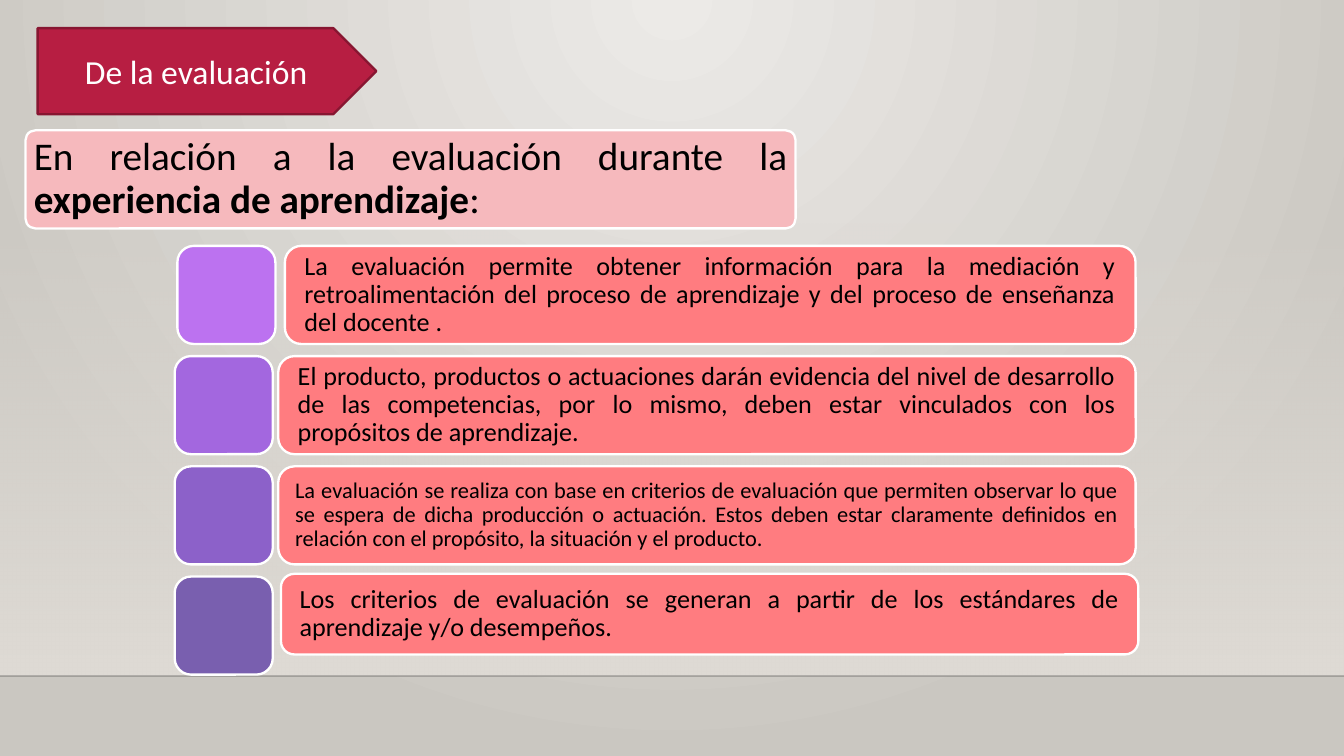
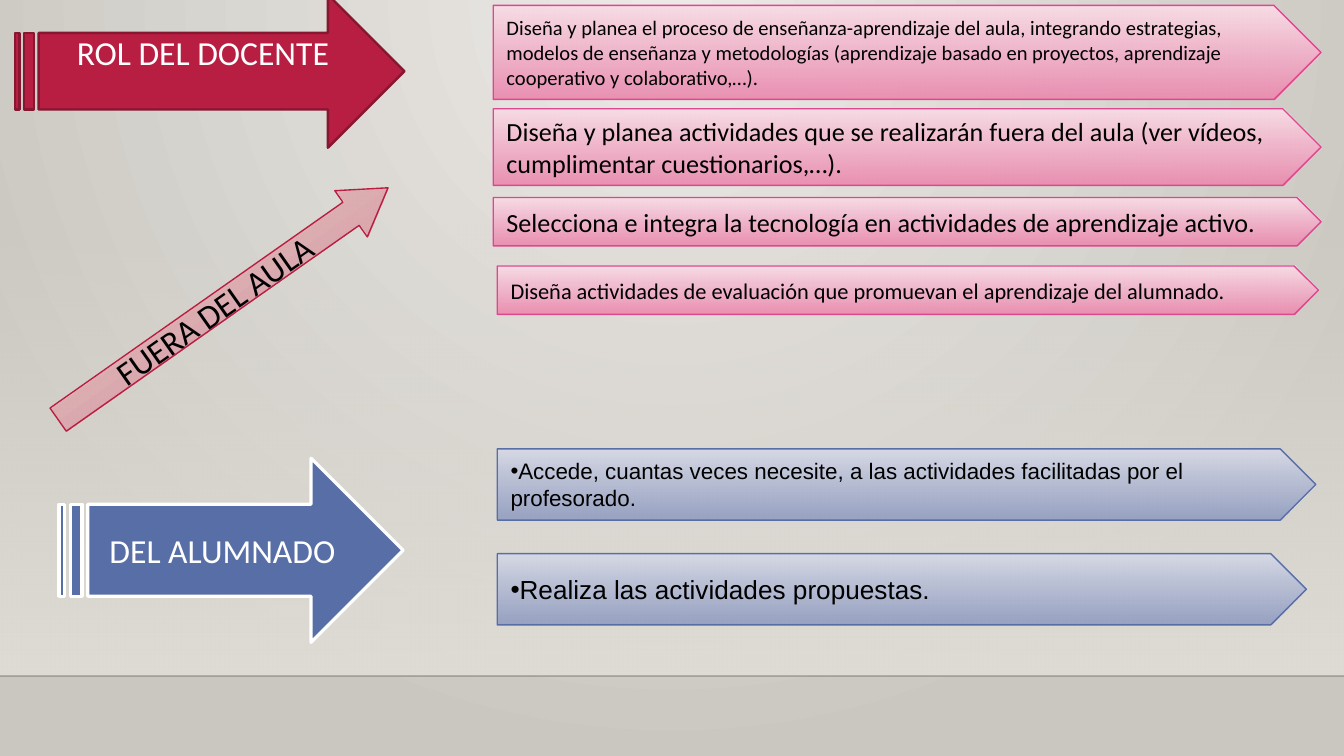
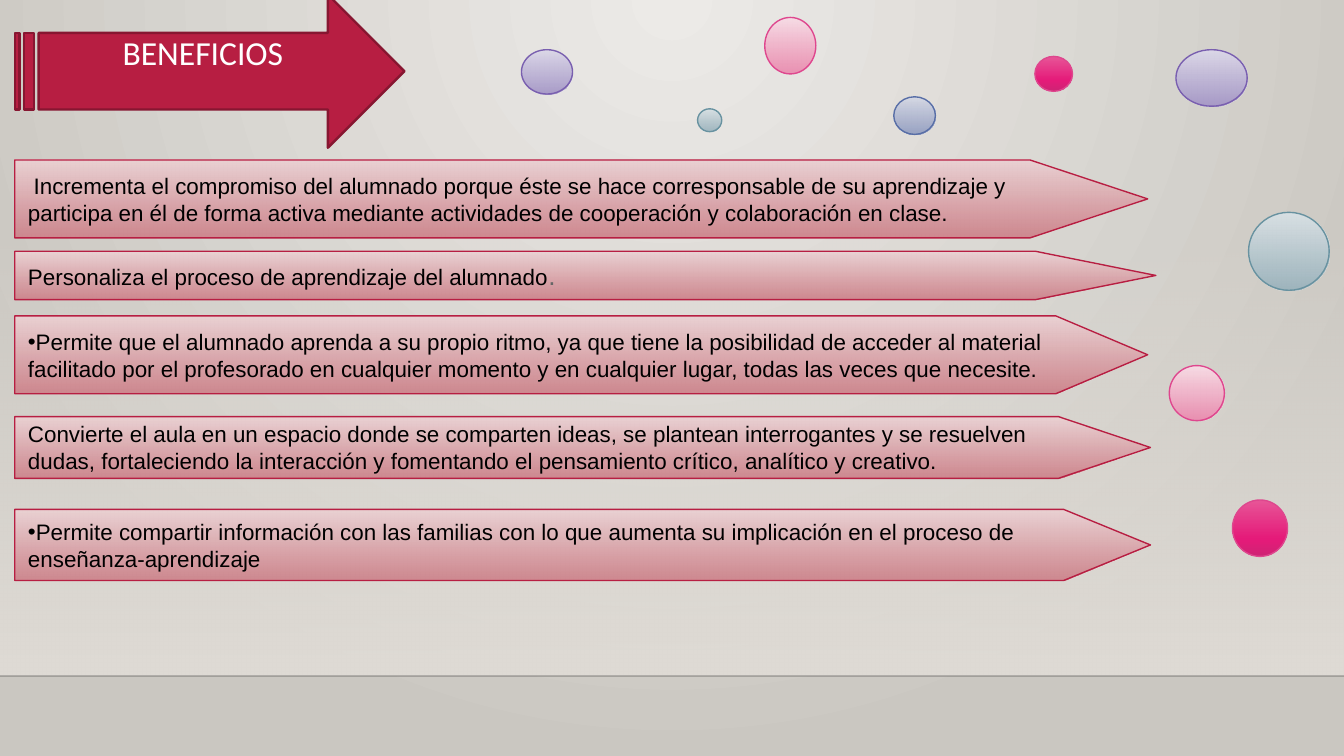
from dataclasses import dataclass
from typing import NamedTuple, Optional

from lxml.etree import SubElement
from pptx import Presentation
from pptx.dml.color import RGBColor
from pptx.enum.shapes import MSO_CONNECTOR, MSO_SHAPE
from pptx.enum.text import MSO_ANCHOR, MSO_AUTO_SIZE, PP_ALIGN
from pptx.oxml.ns import qn
from pptx.util import Inches, Pt

COLUMNS = 100
CELL = Inches(10) // COLUMNS
ROWS = 56.25
TITLE_ONLY = 5

BLACK, WHITE, GREY = "000000", "FFFFFF", "666666"
CRIMSON, DARK_CRIMSON = "B71E42", "871631"
ROSE, CORAL, BLUE = "F6B9BD", "FF7C80", "586EA6"


class Stop(NamedTuple):
    position: int
    color: str
    opacity: int = 100


class Tint(NamedTuple):
    stops: tuple[Stop, ...]
    outline: str


class Box(NamedTuple):
    column: float
    row: float
    columns: float
    rows: float


class Run(NamedTuple):
    text: str
    bold: bool = False
    size: Optional[float] = None
    color: Optional[str] = None


@dataclass(frozen=True)
class Step:
    """One numbered idea of the evaluation slide: a tile and its bar."""
    text: str
    tile_color: str
    tile_column: float = 13
    bar_column: float = 20.7
    bar_columns: float = 63.8
    bar_rows: float = 7.3
    bar_shift: float = 0
    size: float = 14
    inset: float = 1.1


@dataclass(frozen=True)
class Ribbon:
    """A pointed band with one statement."""
    box: Box
    text: str | list[Run]
    size: float = 12
    point: float = 0.5
    bullet: bool = False


class Bubble(NamedTuple):
    box: Box
    tint: Tint


def fade(start: str, end: str, outline: str) -> Tint:
    """Return a two-colour tint with a slightly transparent end."""
    return Tint((Stop(0, start), Stop(100, end, 92)), outline)


PINK_TINT = fade("F7DCE5", "EA8AAE", "DE478E")
RED_TINT = fade("EAD1D3", "CD828A", CRIMSON)
BLUE_TINT = fade("D6D9E5", "929DC0", BLUE)
PURPLE_TINT = fade("DCD8E8", "A395C6", "795FAF")
TEAL_TINT = fade("D9E1E4", "9AB2BC", "6892A0")
MAGENTA_TINT = Tint((Stop(0, "E75597"), Stop(69, "E51A79"), Stop(100, "CF2374")), "DE478E")
BACKDROP = (Stop(0, "ECEAE7"), Stop(100, "CAC7C1"))
FLOOR_FADE = (Stop(0, "DFDBD5", 0), Stop(100, "DFDBD5"))

STEPS = [
    Step("La evaluación permite obtener información para la mediación y retroalimentación "
         "del proceso de aprendizaje y del proceso de enseñanza del docente .",
         "BC72F0", tile_column=13.2, bar_column=21.2, bar_columns=63.3),
    Step("El producto, productos o actuaciones darán evidencia del nivel de desarrollo de las "
         "competencias, por lo mismo, deben estar vinculados con los propósitos de aprendizaje.",
         "A367DF"),
    Step("La evaluación se realiza con base en criterios de evaluación que permiten observar lo "
         "que se espera de dicha producción o actuación. Estos deben estar claramente definidos "
         "en relación con el propósito, la situación y el producto.",
         "8C61C9", size=12, inset=0.9),
    Step("Los criterios de evaluación se generan a partir de los estándares de aprendizaje y/o "
         "desempeños.", "795FAF", bar_column=20.9, bar_rows=6, bar_shift=-0.2),
]
TEACHER_TASKS = [
    Ribbon(Box(36.7, 0.4, 61.6, 7),
           "Diseña y planea el proceso de enseñanza-aprendizaje del aula, integrando estrategias, "
           "modelos de enseñanza y metodologías (aprendizaje basado en proyectos, aprendizaje "
           "cooperativo y colaborativo,…).", 11),
    Ribbon(Box(36.7, 8.1, 61.6, 5.7),
           "Diseña y planea actividades que se realizarán fuera del aula (ver vídeos, "
           "cumplimentar cuestionarios,…).", 14),
    Ribbon(Box(36.7, 14.7, 61.6, 3.6),
           "Selecciona e integra la tecnología en actividades de aprendizaje activo.", 14),
    Ribbon(Box(37, 19.8, 61.1, 3.6),
           "Diseña actividades de evaluación que promuevan el aprendizaje del alumnado."),
]
STUDENT_TASKS = [
    Ribbon(Box(37, 33.4, 60.9, 5.3),
           "Accede, cuantas veces necesite, a las actividades facilitadas por el profesorado.",
           bullet=True),
    Ribbon(Box(37, 41.2, 60.2, 5.3), "Realiza las actividades propuestas.", 14, bullet=True),
]
BENEFITS = [
    Ribbon(Box(1.1, 11.9, 84.3, 5.8),
           [Run(" ", size=11, color=GREY),
            Run("Incrementa el compromiso del alumnado porque éste se hace corresponsable de su "
                "aprendizaje y participa en él de forma activa mediante actividades de "
                "cooperación y colaboración en clase.")], point=1.51),
    Ribbon(Box(1.1, 18.7, 84.9, 3.6),
           [Run("Personaliza el proceso de aprendizaje del alumnado"),
            Run(".", size=14, color=GREY)], point=2.49),
    Ribbon(Box(1.1, 23.5, 84.3, 5.8),
           "Permite que el alumnado aprenda a su propio ritmo, ya que tiene la posibilidad de "
           "acceder al material facilitado por el profesorado en cualquier momento y en "
           "cualquier lugar, todas las veces que necesite.", point=1.18, bullet=True),
    Ribbon(Box(1.1, 31, 84.5, 4.6),
           "Convierte el aula en un espacio donde se comparten ideas, se plantean interrogantes "
           "y se resuelven dudas, fortaleciendo la interacción y fomentando el pensamiento "
           "crítico, analítico y creativo.", point=1.49),
    Ribbon(Box(1.1, 37.9, 84.5, 5.3),
           "Permite compartir información con las familias con lo que aumenta su implicación en "
           "el proceso de enseñanza-aprendizaje", point=1.22, bullet=True),
]
BUBBLES = [
    Bubble(Box(87.5, 3.7, 5.3, 4.2), PURPLE_TINT),
    Bubble(Box(66.5, 7.2, 3.1, 2.8), BLUE_TINT),
    Bubble(Box(92.9, 15.8, 6, 5.8), TEAL_TINT),
    Bubble(Box(87, 27.2, 4.1, 4.1), PINK_TINT),
    Bubble(Box(91.7, 37.2, 4.1, 4.2), MAGENTA_TINT),
    Bubble(Box(51.9, 8.1, 1.8, 1.7), TEAL_TINT),
    Bubble(Box(77, 4.2, 2.8, 2.6), MAGENTA_TINT),
    Bubble(Box(38.8, 3.7, 3.8, 3.3), PURPLE_TINT),
    Bubble(Box(56.9, 1.3, 3.8, 4.2), PINK_TINT),
]


def rgb(color: str) -> RGBColor:
    """Turn a hex string into a colour."""
    return RGBColor.from_string(color)


def grid(cells: float) -> int:
    """Turn a count of grid cells into a length."""
    return round(cells * CELL)


def set_opacity(color_element, percent: int) -> None:
    """Make a colour element partly transparent."""
    SubElement(color_element, qn("a:alpha"), val=str(percent * 1000))


def paint_gradient(fill, owner, stops: tuple[Stop, ...], radial: bool = False) -> None:
    """Fill the owner element with a vertical or a radial gradient."""
    fill.gradient()
    gradient = next(owner.iter(qn("a:gradFill")))
    for child in list(gradient):
        gradient.remove(child)
    stop_list = SubElement(gradient, qn("a:gsLst"))
    for stop in stops:
        mark = SubElement(stop_list, qn("a:gs"), pos=str(stop.position * 1000))
        color = SubElement(mark, qn("a:srgbClr"), val=stop.color)
        if stop.opacity < 100:
            set_opacity(color, stop.opacity)
    if radial:
        circle = SubElement(gradient, qn("a:path"), path="circle")
        SubElement(circle, qn("a:fillToRect"), l="43000", t="0", r="43000", b="100000")
    else:
        SubElement(gradient, qn("a:lin"), ang="5400000", scaled="0")


def draw(slide, kind: MSO_SHAPE, box: Box, fill: str | tuple[Stop, ...],
         outline: Optional[str] = None, width: float = 0.75, adjust: tuple[float, ...] = ()):
    """Add a preset shape on the grid."""
    shape = slide.shapes.add_shape(kind, *map(grid, box))
    shape.shadow.inherit = False
    for index, value in enumerate(adjust):
        shape.adjustments[index] = value
    if isinstance(fill, str):
        shape.fill.solid()
        shape.fill.fore_color.rgb = rgb(fill)
    else:
        paint_gradient(shape.fill, shape.element, fill)
    if outline:
        shape.line.color.rgb = rgb(outline)
        shape.line.width = Pt(width)
    else:
        shape.line.fill.background()
    return shape


def write(shape, text: str | list[Run], *, size: float = 18, font: str = "Calibri",
          color: str = BLACK, align: PP_ALIGN = PP_ALIGN.LEFT, spacing: Optional[float] = None,
          insets: tuple[float, float] = (1, 0.5), bullet: bool = False) -> None:
    """Write one formatted paragraph into a shape."""
    frame = shape.text_frame
    frame.word_wrap = True
    frame.auto_size = MSO_AUTO_SIZE.NONE
    frame.vertical_anchor = MSO_ANCHOR.MIDDLE
    frame.margin_left = frame.margin_right = grid(insets[0])
    frame.margin_top = frame.margin_bottom = grid(insets[1])
    paragraph = frame.paragraphs[0]
    paragraph.alignment = align
    if spacing:
        paragraph.line_spacing = spacing
    if bullet:
        properties = paragraph._p.get_or_add_pPr()
        SubElement(properties, qn("a:buFont"), typeface="Arial")
        SubElement(properties, qn("a:buChar"), char="•")
    for part in [Run(text)] if isinstance(text, str) else text:
        run = paragraph.add_run()
        run.text = part.text
        run.font.name = font
        run.font.size = Pt(part.size or size)
        run.font.bold = part.bold
        run.font.color.rgb = rgb(part.color or color)


def set_title(slide, text: str, box: Box) -> None:
    """Move the title placeholder onto its arrow and format it."""
    title = slide.shapes.title
    title.left, title.top, title.width, title.height = map(grid, box)
    write(title, text, color=WHITE, align=PP_ALIGN.CENTER, insets=(1, 0))
    slide.shapes.element.append(title.element)


def add_arrow_title(slide, text: str) -> None:
    """Add the striped arrow that heads a slide, with its title."""
    draw(slide, MSO_SHAPE.STRIPED_RIGHT_ARROW, Box(1.1, -0.4, 29, 11.4),
         CRIMSON, DARK_CRIMSON, 1.25)
    set_title(slide, text, Box(2.9, 2.4, 24.4, 3))


def add_ribbons(slide, ribbons: list[Ribbon], tint: Tint, font: str) -> None:
    """Draw a family of ribbons in one tint."""
    for ribbon in ribbons:
        band = draw(slide, MSO_SHAPE.PENTAGON, ribbon.box, tint.stops, tint.outline,
                    adjust=(ribbon.point,))
        write(band, ribbon.text, size=ribbon.size, font=font, bullet=ribbon.bullet)


def dress_master(master, slide) -> None:
    """Give the master its backdrop, floor band and floor line."""
    paint_gradient(master.background.fill, master.element, BACKDROP, radial=True)
    floor_row = 50.3
    band = draw(slide, MSO_SHAPE.RECTANGLE, Box(0, 16.6, COLUMNS, floor_row - 16.6), FLOOR_FADE)
    edge = slide.shapes.add_connector(MSO_CONNECTOR.STRAIGHT, 0, grid(floor_row),
                                      grid(COLUMNS), grid(floor_row))
    edge.line.color.rgb = rgb("000001")
    edge.line.width = Pt(1)
    set_opacity(next(edge.element.iter(qn("a:srgbClr"))), 20)
    SubElement(edge.element.spPr, qn("a:effectLst"))
    for offset, part in enumerate((band, edge)):
        next(part.element.iter(qn("p:cNvPr"))).set("id", str(20 + offset))
        master.shapes.element.insert(2 + offset, part.element)


def build_evaluation(slide) -> None:
    """Build the slide on evaluation."""
    heading = draw(slide, MSO_SHAPE.ROUNDED_RECTANGLE, Box(1.9, 9.7, 57.3, 7.3),
                   ROSE, WHITE, 1.25, (0.1,))
    write(heading, [Run("En relación a la evaluación durante la "),
                    Run("experiencia de aprendizaje", bold=True), Run(":")],
          size=21, align=PP_ALIGN.JUSTIFY, spacing=0.9, insets=(0.4, 0.3))
    tile_side, first_row, pitch = 7.3, 18.3, 8.2
    for index, step in enumerate(STEPS):
        row = first_row + index * pitch
        draw(slide, MSO_SHAPE.ROUNDED_RECTANGLE,
             Box(step.tile_column, row, tile_side, tile_side), step.tile_color, WHITE, 1.25)
        bar = draw(slide, MSO_SHAPE.ROUNDED_RECTANGLE,
                   Box(step.bar_column, row + step.bar_shift, step.bar_columns, step.bar_rows),
                   CORAL, WHITE, 1.25)
        write(bar, step.text, size=step.size, align=PP_ALIGN.JUSTIFY, spacing=0.9,
              insets=(step.inset, step.inset))
    draw(slide, MSO_SHAPE.PENTAGON, Box(2.8, 2.1, 25.2, 6.4), CRIMSON, DARK_CRIMSON, 1.25)
    set_title(slide, "De la evaluación", Box(2.8, 2.1, 23.6, 6.4))


def build_roles(slide) -> None:
    """Build the slide on the roles of teacher and students."""
    add_arrow_title(slide, "ROL DEL DOCENTE")
    add_ribbons(slide, TEACHER_TASKS, PINK_TINT, "Calibri")
    students = draw(slide, MSO_SHAPE.STRIPED_RIGHT_ARROW, Box(4.4, 34.1, 25.6, 13.7),
                    BLUE, WHITE, 1.75)
    write(students, "DEL ALUMNADO", color=WHITE, align=PP_ALIGN.CENTER)
    outside = draw(slide, MSO_SHAPE.RIGHT_ARROW, Box(1.6, 20.5, 30, 4.2),
                   RED_TINT.stops, RED_TINT.outline, adjust=(0.5, 0.8))
    outside.rotation = 324.9
    write(outside, "FUERA DEL AULA", align=PP_ALIGN.CENTER)
    add_ribbons(slide, STUDENT_TASKS, BLUE_TINT, "Arial")


def build_benefits(slide) -> None:
    """Build the slide on benefits."""
    add_arrow_title(slide, "BENEFICIOS")
    add_ribbons(slide, BENEFITS, RED_TINT, "Arial")
    for bubble in BUBBLES:
        draw(slide, MSO_SHAPE.FLOWCHART_CONNECTOR, bubble.box,
             bubble.tint.stops, bubble.tint.outline)


def main() -> None:
    """Build and save the presentation."""
    deck = Presentation()
    deck.slide_width, deck.slide_height = grid(COLUMNS), grid(ROWS)
    builders = (build_evaluation, build_roles, build_benefits)
    slides = [deck.slides.add_slide(deck.slide_layouts[TITLE_ONLY]) for _ in builders]
    dress_master(deck.slide_master, slides[0])
    for build, slide in zip(builders, slides):
        build(slide)
    deck.save("out.pptx")


if __name__ == "__main__":
    main()
